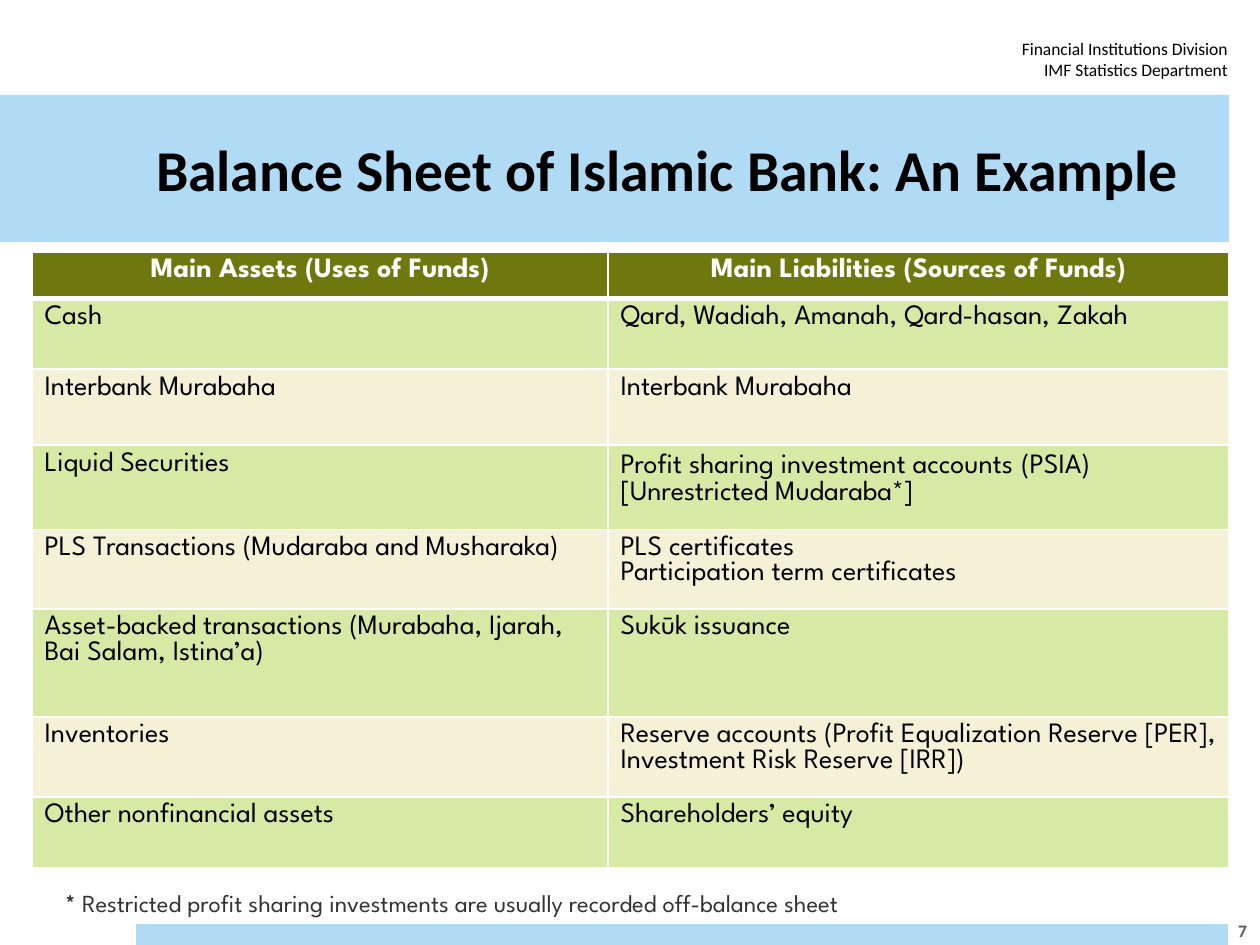
from lxml import etree
from pptx import Presentation
from pptx.dml.color import RGBColor
from pptx.enum.shapes import MSO_SHAPE
from pptx.enum.text import MSO_ANCHOR, PP_ALIGN
from pptx.oxml.ns import qn
from pptx.util import Emu, Pt

LEFT, CENTER, RIGHT = PP_ALIGN.LEFT, PP_ALIGN.CENTER, PP_ALIGN.RIGHT
MIDDLE, TOP = MSO_ANCHOR.MIDDLE, MSO_ANCHOR.TOP
SKY = RGBColor(0xB1, 0xDA, 0xF5)
OLIVE = RGBColor(0x6E, 0x78, 0x0E)
GREEN = RGBColor(0xD6, 0xE9, 0xA5)
CREAM = RGBColor(0xF5, 0xF1, 0xD7)
WHITE = RGBColor(0xFF, 0xFF, 0xFF)
BLACK = RGBColor(0, 0, 0)
DARK_GRAY = RGBColor(0x33, 0x33, 0x33)
GRAY = RGBColor(0x59, 0x59, 0x59)
HEADING_FONT, BODY_FONT = "Calibri", "League Spartan"


def px(*lengths):
    """Lengths at 126 pixels to the inch, as EMU."""
    return [Emu(round(length * 914400 / 126)) for length in lengths]


def style(paragraph, font_name, size, color, bold=False, align=LEFT):
    paragraph.alignment = align
    font = paragraph.font
    font.name, font.size, font.bold = font_name, Pt(size), bold
    font.color.rgb = color


presentation = Presentation()
presentation.slide_width, presentation.slide_height = px(1260, 945)
slide = presentation.slides.add_slide(presentation.slide_layouts[5])
shapes = slide.shapes

# Title band
title = shapes.title
title.left, title.top, title.width, title.height = px(0, 95, 1229, 147)
title.fill.solid()
title.fill.fore_color.rgb = SKY
frame = title.text_frame
frame.text = "Balance Sheet of Islamic Bank: An Example"
frame.margin_left, frame.margin_top, frame.margin_right, frame.margin_bottom = px(144, 5, 38, 5)
frame.vertical_anchor = MIDDLE
frame.word_wrap = True
style(frame.paragraphs[0], HEADING_FONT, 33, BLACK, True, CENTER)

# Footer bar
bar = shapes.add_shape(MSO_SHAPE.RECTANGLE, *px(136, 924, 1092, 21))
bar.shadow.inherit = False
bar.fill.solid()
bar.fill.fore_color.rgb = SKY
bar.line.fill.background()

# Department name and page number
labels = [
    ("Financial Institutions Division\vIMF Statistics Department",
     (935, 32, 305, 55), BLACK, False, RIGHT, TOP),
    ("7", (1211, 904, 63, 53), GRAY, True, CENTER, MIDDLE),
]
for text, box, color, bold, align, anchor in labels:
    frame = shapes.add_textbox(*px(*box)).text_frame
    frame.word_wrap = True
    frame.vertical_anchor = anchor
    frame.text = text
    style(frame.paragraphs[0], HEADING_FONT, 10, color, bold, align)

# Balance sheet table
rows = [
    ("Main Assets (Uses of Funds)", "Main Liabilities (Sources of Funds)"),
    ("Cash", "Qard, Wadiah, Amanah, Qard-hasan, Zakah"),
    ("Interbank Murabaha", "Interbank Murabaha"),
    ("Liquid Securities",
     "Profit sharing investment accounts (PSIA) [Unrestricted Mudaraba*]"),
    ("PLS Transactions (Mudaraba and Musharaka)",
     "PLS certificates\nParticipation term certificates"),
    ("Asset-backed transactions (Murabaha, Ijarah, Bai Salam, Istina’a)",
     "Sukūk issuance"),
    ("Inventories",
     "Reserve accounts (Profit Equalization Reserve [PER], Investment Risk Reserve [IRR])"),
    ("Other nonfinancial assets", "Shareholders’ equity"),
]
row_heights = px(44, 71, 76, 76, 76, 108, 76, 71)
column_widths = px(576, 621)
table = shapes.add_table(len(rows), 2, *px(32, 252), sum(column_widths), sum(row_heights)).table
for column, width in zip(table.columns, column_widths):
    column.width = width

for row_index, texts in enumerate(rows):
    table.rows[row_index].height = row_heights[row_index]
    is_header = row_index == 0
    fill = OLIVE if is_header else (GREEN if row_index % 2 else CREAM)
    for column_index, text in enumerate(texts):
        cell = table.cell(row_index, column_index)
        # White borders, thicker between header and body
        properties = cell._tc.get_or_add_tcPr()
        for side in ("lnL", "lnR", "lnT", "lnB"):
            thick = (row_index, side) in ((0, "lnB"), (1, "lnT"))
            line = etree.SubElement(properties, qn(f"a:{side}"), w=str(Pt(3 if thick else 1)))
            solid = etree.SubElement(line, qn("a:solidFill"))
            etree.SubElement(solid, qn("a:srgbClr"), val=str(WHITE))
        cell.fill.solid()
        cell.fill.fore_color.rgb = fill
        cell.text = text
        for paragraph in cell.text_frame.paragraphs:
            style(paragraph, BODY_FONT, 16, WHITE if is_header else BLACK,
                  is_header, CENTER if is_header else LEFT)

# The space before "(PSIA)" is larger and opens up its line
paragraph = table.cell(3, 1).text_frame.paragraphs[0]
before, after = paragraph.text.split(" (PSIA)")
paragraph.runs[0].text = before
space = paragraph.add_run()
space.text = " "
space.font.size = Pt(18)
paragraph.add_run().text = "(PSIA)" + after

# Footnote
frame = shapes.add_textbox(*px(53, 882, 945, 43)).text_frame
frame.word_wrap = False
paragraph = frame.paragraphs[0]
style(paragraph, BODY_FONT, 14, DARK_GRAY)
star = paragraph.add_run()
star.text = "* "
star.font.bold = True
paragraph.add_run().text = (
    "Restricted profit sharing investments are usually recorded off-balance sheet")

presentation.save("out.pptx")
